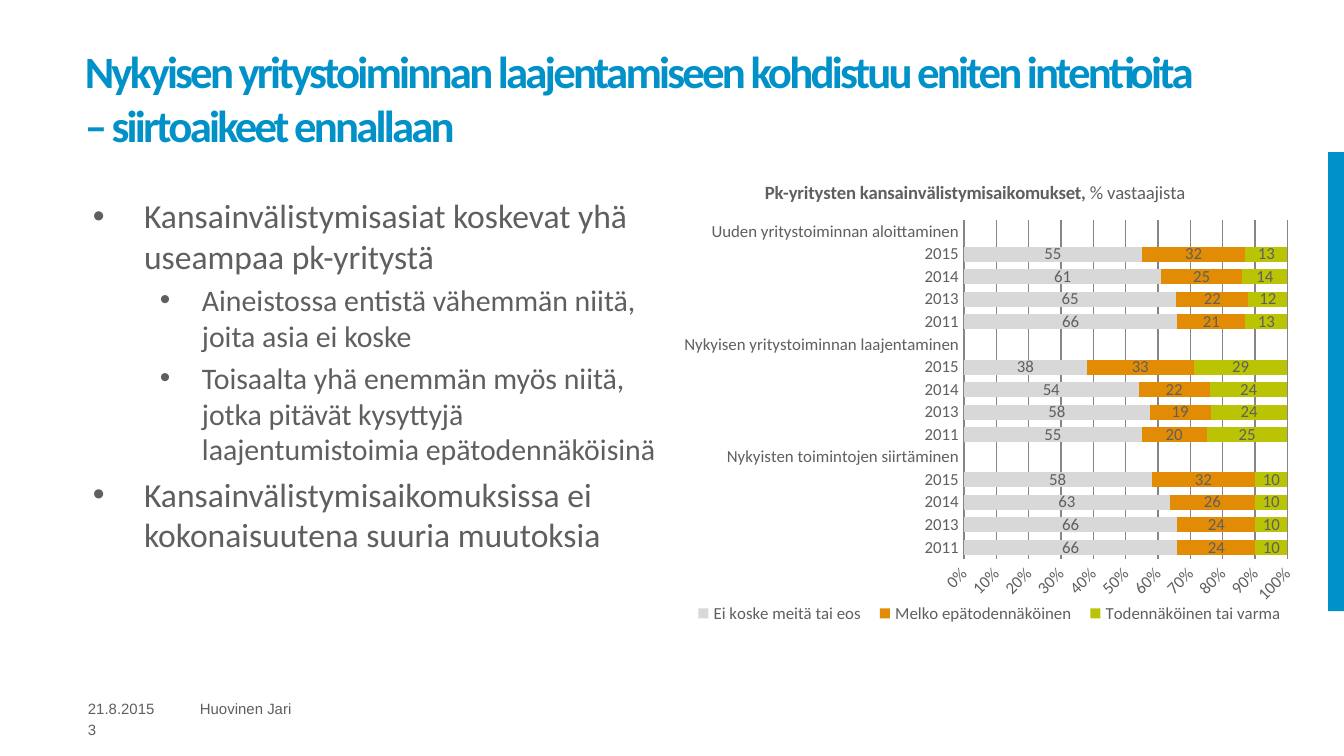
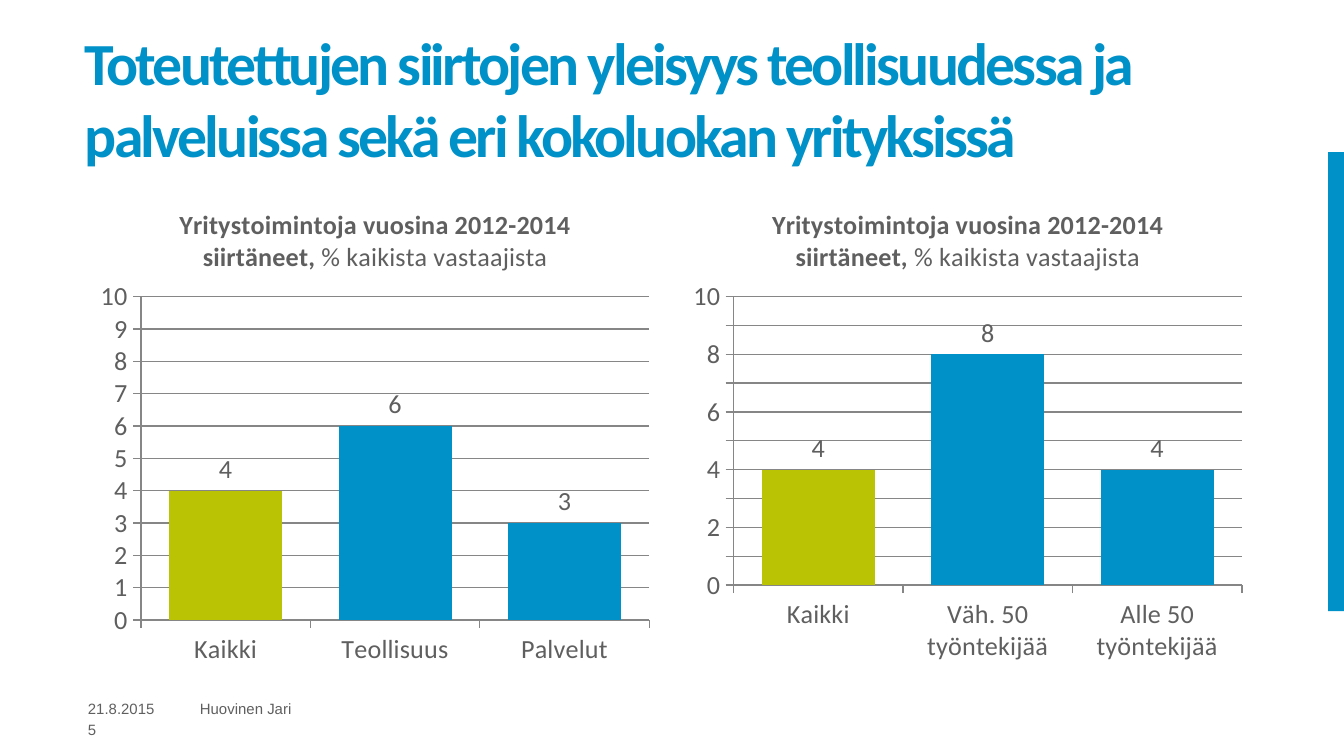
import lxml.etree
import pptx
import pptx.chart.data
import pptx.dml.color
import pptx.enum.chart
import pptx.enum.shapes
import pptx.enum.text
import pptx.oxml.ns
import pptx.util

Pt = pptx.util.Pt
qn = pptx.oxml.ns.qn
chart_enum = pptx.enum.chart
text_enum = pptx.enum.text

COLORS = {
    "blue": "0091C9",
    "text": "5F5F5F",
    "gray": "D8D8D8",
    "orange": "E28C05",
    "green": "BAC405",
    "grid": "868686",
}

# Boxes: left, top, width, height in points
TITLE_BOX = (31, 21, 648, 62.5)
BAND_BOX = (711.5, 81.5, 8.5, 246)
BODY_BOX = (42.5, 101, 317.5, 266)
STACKED_BOX = (360, 83.5, 340, 266.5)
COLUMN_BOX = (48, 95, 306, 266.5)
COLUMN_STEP = 317.5

TITLE_FORMAT = {"name": "Calibri", "bold": True}
BODY_FORMAT = {"name": "Calibri", "bold": False}
FOOTER_FORMAT = {"name": "Arial", "size": Pt(8)}

# Left margin, hanging indent and size of each list level
LEVELS = [(27.5, 27.5, 18), (58.5, 22.5, 16)]

BULLETS = [
    (0, "Kansainvälistymisasiat koskevat yhä useampaa pk-yritystä"),
    (1, "Aineistossa entistä vähemmän niitä, joita asia ei koske"),
    (1, "Toisaalta yhä enemmän myös niitä, jotka pitävät kysyttyjä "
        "laajentumistoimia epätodennäköisinä"),
    (0, "Kansainvälistymisaikomuksissa ei kokonaisuutena suuria muutoksia"),
]

YEARS = ["2011", "2013", "2014", "2015"]
TOPICS = [
    "Nykyisten toimintojen siirtäminen",
    "Nykyisen yritystoiminnan laajentaminen",
    "Uuden yritystoiminnan aloittaminen",
]
# Name, colour and values by topic and year
INTENTIONS = [
    ("Ei koske meitä tai eos", "gray",
     [[66, 66, 63, 58], [55, 58, 54, 38], [66, 65, 61, 55]]),
    ("Melko epätodennäköinen", "orange",
     [[24, 24, 26, 32], [20, 19, 22, 33], [21, 22, 25, 32]]),
    ("Todennäköinen tai varma", "green",
     [[10, 10, 10, 10], [25, 24, 24, 29], [13, 12, 14, 13]]),
]

# Categories, values and relative plot height
TRANSFERS = [
    (["Kaikki", "Teollisuus", "Palvelut"], [4, 6, 3], 0.65),
    (["Kaikki", "Väh. 50 työntekijää", "Alle 50 työntekijää"], [4, 8, 4], 0.58),
]


def rgb(color):
    return pptx.dml.color.RGBColor.from_string(COLORS[color])


def apply_format(target, values):
    for name, value in values.items():
        setattr(target, name, value)


def format_font(font, color, values):
    apply_format(font, values)
    font.color.rgb = rgb(color)


def fill_solid(item, color):
    item.format.fill.solid()
    item.format.fill.fore_color.rgb = rgb(color)


def place(shape, box):
    names = ("left", "top", "width", "height")
    apply_format(shape, dict(zip(names, map(Pt, box))))


# Shared parts: title, side band, footer
def add_base_slide(presentation, layout, title, title_size, number):
    slide = presentation.slides.add_slide(presentation.slide_layouts[layout])

    band = slide.shapes.add_shape(
        pptx.enum.shapes.MSO_SHAPE.RECTANGLE, *map(Pt, BAND_BOX))
    band.shadow.inherit = False
    band.fill.solid()
    band.fill.fore_color.rgb = rgb("blue")
    band.line.fill.background()

    shape = slide.shapes.title
    place(shape, TITLE_BOX)
    frame = shape.text_frame
    frame.text = title
    margins = ("margin_left", "margin_top", "margin_right", "margin_bottom")
    apply_format(frame, dict.fromkeys(margins, Pt(14.4)))
    apply_format(frame, {
        "word_wrap": True,
        "auto_size": text_enum.MSO_AUTO_SIZE.NONE,
        "vertical_anchor": text_enum.MSO_ANCHOR.MIDDLE,
    })
    paragraph = frame.paragraphs[0]
    paragraph.alignment = text_enum.PP_ALIGN.LEFT
    for run in paragraph.runs:
        format_font(run.font, "blue", {**TITLE_FORMAT, "size": Pt(title_size)})
        run._r.get_or_add_rPr().set("spc", "-150")

    add_footer(slide, (40, 371.5), number)
    return slide


def add_footer(slide, origin, number):
    left, top = origin
    parts = [
        ("21.8.2015", 0, 0, 73.5),
        ("Huovinen Jari", 60, 0, 128),
        (number, 0, 11, 57.5),
    ]
    for text, x, y, width in parts:
        box = (left + x, top + y, width, 13)
        frame = slide.shapes.add_textbox(*map(Pt, box)).text_frame
        frame.word_wrap = True
        frame.text = text
        format_font(frame.paragraphs[0].runs[0].font, "text", FOOTER_FORMAT)


# Bulleted list
def fill_body(shape, box):
    place(shape, box)
    frame = shape.text_frame
    frame.auto_size = text_enum.MSO_AUTO_SIZE.NONE
    for index, (level, text) in enumerate(BULLETS):
        paragraph = frame.add_paragraph() if index else frame.paragraphs[0]
        paragraph.level = level
        if index == 0:
            paragraph.space_before = Pt(0)
        margin, hanging, size = LEVELS[level]
        properties = paragraph._p.get_or_add_pPr()
        properties.set("marL", str(Pt(margin)))
        properties.set("indent", str(-Pt(hanging)))
        bullet_font = lxml.etree.SubElement(properties, qn("a:buFont"))
        bullet_font.set("typeface", "Arial")
        lxml.etree.SubElement(properties, qn("a:buChar")).set("char", "•")
        run = paragraph.add_run()
        run.text = text
        format_font(run.font, "text", {**BODY_FORMAT, "size": Pt(size)})


# Chart helpers
def set_layout(parent, index, fractions, inner=False):
    """Positions a chart part by fractions of the chart's size."""
    for old in parent.findall(qn("c:layout")):
        parent.remove(old)
    layout = lxml.etree.Element(qn("c:layout"))
    manual = lxml.etree.SubElement(layout, qn("c:manualLayout"))
    values = [("layoutTarget", "inner")] if inner else []
    values += [("xMode", "edge"), ("yMode", "edge")]
    values += zip("xywh", fractions)
    for name, value in values:
        lxml.etree.SubElement(manual, qn("c:" + name)).set("val", str(value))
    parent.insert(index, layout)


def add_chart(slide, box, kind, data, title, size, title_size, title_at, plot_at):
    chart = slide.shapes.add_chart(kind, *map(Pt, box), data).chart
    format_font(chart.font, "text", {**BODY_FORMAT, "size": Pt(size)})
    chart.has_legend = False

    chart.has_title = True
    paragraph = chart.chart_title.text_frame.paragraphs[0]
    for text, bold in zip(title, (True, False)):
        run = paragraph.add_run()
        run.text = text
        format_font(run.font, "text", {
            "name": "Calibri", "size": Pt(title_size), "bold": bold})
    set_layout(chart.chart_title._element, 1, title_at)
    set_layout(chart._chartSpace.chart.plotArea, 0, plot_at, inner=True)

    value_axis = chart.value_axis
    value_axis.has_major_gridlines = True
    for line in (value_axis.major_gridlines.format.line,
                 value_axis.format.line, chart.category_axis.format.line):
        line.color.rgb = rgb("grid")
        line.width = Pt(0.75)

    plot = chart.plots[0]
    apply_format(plot, {
        "gap_width": 50, "vary_by_categories": False, "has_data_labels": True})
    plot.data_labels.show_value = True
    format_font(plot.data_labels.font, "text",
                {**BODY_FORMAT, "size": Pt(size)})
    return chart


def add_intentions_chart(slide, box):
    data = pptx.chart.data.CategoryChartData()
    data.categories = [name for topic in TOPICS for name in YEARS + [topic]]
    for name, _, groups in INTENTIONS:
        data.add_series(name, [v for group in groups for v in group + [None]])
    chart = add_chart(
        slide, box, chart_enum.XL_CHART_TYPE.BAR_STACKED_100, data,
        ("Pk-yritysten kansainvälistymisaikomukset,", " % vastaajista"),
        9, 10, (0.14, 0.04), (0.46, 0.13, 0.51, 0.68))
    chart.plots[0].overlap = 100
    for series, (_, color, _) in zip(chart.plots[0].series, INTENTIONS):
        fill_solid(series, color)

    for axis in (chart.category_axis, chart.value_axis):
        axis.major_tick_mark = chart_enum.XL_TICK_MARK.NONE
    chart.value_axis.format.line.fill.background()
    apply_format(chart.value_axis, {
        "minimum_scale": 0, "maximum_scale": 1, "major_unit": 0.1})
    apply_format(chart.value_axis.tick_labels, {
        "number_format": "0%", "number_format_is_linked": False})

    chart.has_legend = True
    apply_format(chart.legend, {
        "position": chart_enum.XL_LEGEND_POSITION.BOTTOM,
        "include_in_layout": False})
    set_layout(chart.legend._element, 1, (0.02, 0.89, 0.96, 0.06))


def add_transfers_chart(slide, box, categories, values, plot_height):
    data = pptx.chart.data.CategoryChartData()
    data.categories = categories
    data.add_series("Series 1", values)
    chart = add_chart(
        slide, box, chart_enum.XL_CHART_TYPE.COLUMN_CLUSTERED, data,
        ("Yritystoimintoja vuosina 2012-2014 siirtäneet,",
         " % kaikista vastaajista"),
        14, 14, (0.15, 0.05), (0.09, 0.24, 0.89, plot_height))
    apply_format(chart.value_axis, {
        "minimum_scale": 0, "maximum_scale": 10, "major_unit": 1})
    for axis in (chart.category_axis, chart.value_axis):
        axis.major_tick_mark = chart_enum.XL_TICK_MARK.OUTSIDE
    plot = chart.plots[0]
    plot.data_labels.position = chart_enum.XL_LABEL_POSITION.OUTSIDE_END
    for index in range(len(values)):
        fill_solid(plot.series[0].points[index], "blue" if index else "green")


# Slides
def build_intentions_slide(presentation):
    slide = add_base_slide(
        presentation, 1,
        "Nykyisen yritystoiminnan laajentamiseen kohdistuu eniten intentioita"
        "\v– siirtoaikeet ennallaan", 24, "3")
    add_intentions_chart(slide, STACKED_BOX)
    fill_body(slide.placeholders[1], BODY_BOX)


def build_transfers_slide(presentation):
    slide = add_base_slide(
        presentation, 5,
        "Toteutettujen siirtojen yleisyys teollisuudessa ja palveluissa "
        "sekä eri kokoluokan yrityksissä", 32, "5")
    left, top, width, height = COLUMN_BOX
    for index, transfer in enumerate(TRANSFERS):
        box = (left + index * COLUMN_STEP, top, width, height)
        add_transfers_chart(slide, box, *transfer)


def main():
    presentation = pptx.Presentation()
    presentation.slide_width = Pt(720)
    presentation.slide_height = Pt(405)
    build_intentions_slide(presentation)
    build_transfers_slide(presentation)
    presentation.save("out.pptx")


if __name__ == "__main__":
    main()
